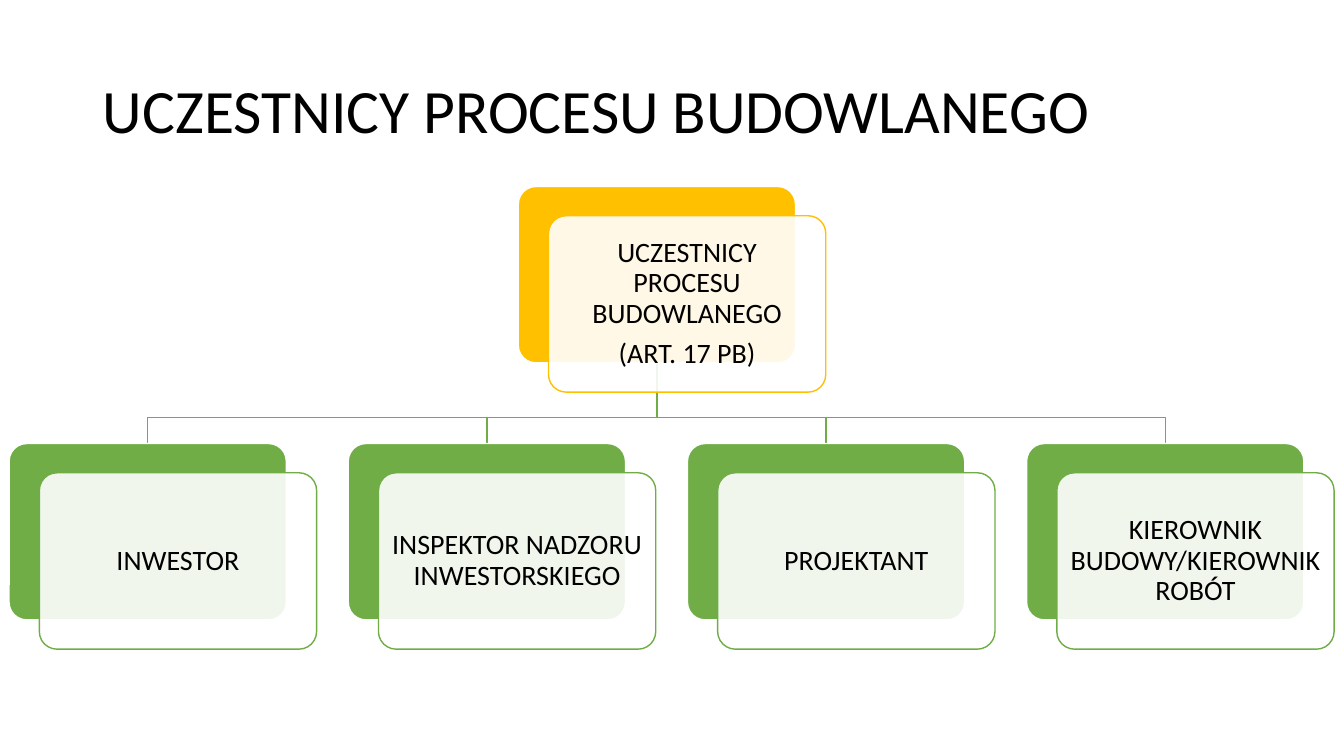
"""Build a slide with a hierarchy chart of the participants in a construction process."""
from dataclasses import dataclass

import lxml.etree
import pptx
import pptx.dml.color
import pptx.enum.shapes
import pptx.enum.text
import pptx.oxml.ns
import pptx.util
from pptx.util import Inches

COLOURS = {"text": "000000", "card": "FFFFFF", "root": "FFC000", "child": "70AD47"}
FONT = "Calibri"
CARD_WIDTH, CARD_HEIGHT = 2.75, 1.75
OFFSET_X, OFFSET_Y = 0.3, 0.29
CHILD_LEFT, CHILD_TOP, CHILD_STEP = 0.09, 4.4, 3.364
BRANCH_Y = 4.14
INSET = 0.07


@dataclass(frozen=True)
class Participant:
    """A card with its place, accent colour and paragraphs."""
    left: float
    top: float
    accent: str
    lines: tuple[str, ...]

    @property
    def centre(self) -> float:
        """Return the horizontal centre of the back plate."""
        return self.left + CARD_WIDTH / 2


ROOT = Participant(5.14, 1.85, "root", ("UCZESTNICY PROCESU BUDOWLANEGO", "(ART. 17 PB)"))
ROLES = ("INWESTOR", "INSPEKTOR NADZORU INWESTORSKIEGO", "PROJEKTANT",
         "KIEROWNIK BUDOWY/KIEROWNIK ROBÓT")
CHILDREN = [Participant(CHILD_LEFT + i * CHILD_STEP, CHILD_TOP, "child", (role,))
            for i, role in enumerate(ROLES)]


def colour(name: str) -> pptx.dml.color.RGBColor:
    """Return a named colour of the slide."""
    return pptx.dml.color.RGBColor.from_string(COLOURS[name])


def style_paragraph(paragraph, size: int) -> None:
    """Set the font and line spacing of a paragraph."""
    paragraph.font.name = FONT
    paragraph.font.size = pptx.util.Pt(size)
    paragraph.font.color.rgb = colour("text")
    paragraph.line_spacing = 0.9


def add_title(slide, text: str) -> None:
    """Place and fill the title."""
    title = slide.shapes.title
    title.left, title.top = Inches(0.92), Inches(0.4)
    title.width, title.height = Inches(11.5), Inches(1.45)
    frame = title.text_frame
    frame.text = text
    frame.vertical_anchor = pptx.enum.text.MSO_ANCHOR.MIDDLE
    frame.paragraphs[0].alignment = pptx.enum.text.PP_ALIGN.LEFT
    style_paragraph(frame.paragraphs[0], 44)


def add_branch(slide, parent: Participant, child: Participant) -> None:
    """Draw the elbow line from a parent to a child."""
    start = parent.top + CARD_HEIGHT
    builder = slide.shapes.build_freeform(Inches(parent.centre), Inches(start))
    corners = [(parent.centre, BRANCH_Y), (child.centre, BRANCH_Y), (child.centre, child.top)]
    builder.add_line_segments([(Inches(x), Inches(y)) for x, y in corners], close=False)
    branch = builder.convert_to_shape()
    branch.shadow.inherit = False
    branch.fill.background()
    branch.line.color.rgb = colour(child.accent)
    branch.line.width = pptx.util.Pt(1)


def add_plate(slide, left: float, top: float, fill: str, line: str):
    """Add a rounded plate of the common card size."""
    plate = slide.shapes.add_shape(
        pptx.enum.shapes.MSO_SHAPE.ROUNDED_RECTANGLE,
        Inches(left), Inches(top), Inches(CARD_WIDTH), Inches(CARD_HEIGHT))
    plate.adjustments[0] = 0.1
    plate.shadow.inherit = False
    plate.fill.solid()
    plate.fill.fore_color.rgb = colour(fill)
    plate.line.color.rgb = colour(line)
    plate.line.width = pptx.util.Pt(1)
    return plate


def add_participant(slide, participant: Participant) -> None:
    """Draw the back plate and the translucent front card with its text."""
    add_plate(slide, participant.left, participant.top, participant.accent, "card")
    card = add_plate(slide, participant.left + OFFSET_X, participant.top + OFFSET_Y,
                     "card", participant.accent)
    qn = pptx.oxml.ns.qn
    fill = card.fill._xPr.find(qn("a:solidFill")).find(qn("a:srgbClr"))
    lxml.etree.SubElement(fill, qn("a:alpha")).set("val", "90000")
    frame = card.text_frame
    frame.word_wrap = True
    frame.vertical_anchor = pptx.enum.text.MSO_ANCHOR.MIDDLE
    frame.margin_left = frame.margin_right = Inches(INSET)
    frame.margin_top = frame.margin_bottom = Inches(INSET)
    frame.text = "\n".join(participant.lines)
    for paragraph in frame.paragraphs:
        paragraph.alignment = pptx.enum.text.PP_ALIGN.CENTER
        paragraph.space_after = pptx.util.Pt(7)
        style_paragraph(paragraph, 20)


def main() -> None:
    """Build and save the presentation."""
    presentation = pptx.Presentation()
    presentation.slide_width, presentation.slide_height = Inches(13.33), Inches(7.5)
    slide = presentation.slides.add_slide(presentation.slide_layouts[5])
    add_title(slide, "UCZESTNICY PROCESU BUDOWLANEGO")
    for child in reversed(CHILDREN):
        add_branch(slide, ROOT, child)
    for participant in (ROOT, *CHILDREN):
        add_participant(slide, participant)
    presentation.save("out.pptx")


if __name__ == "__main__":
    main()
